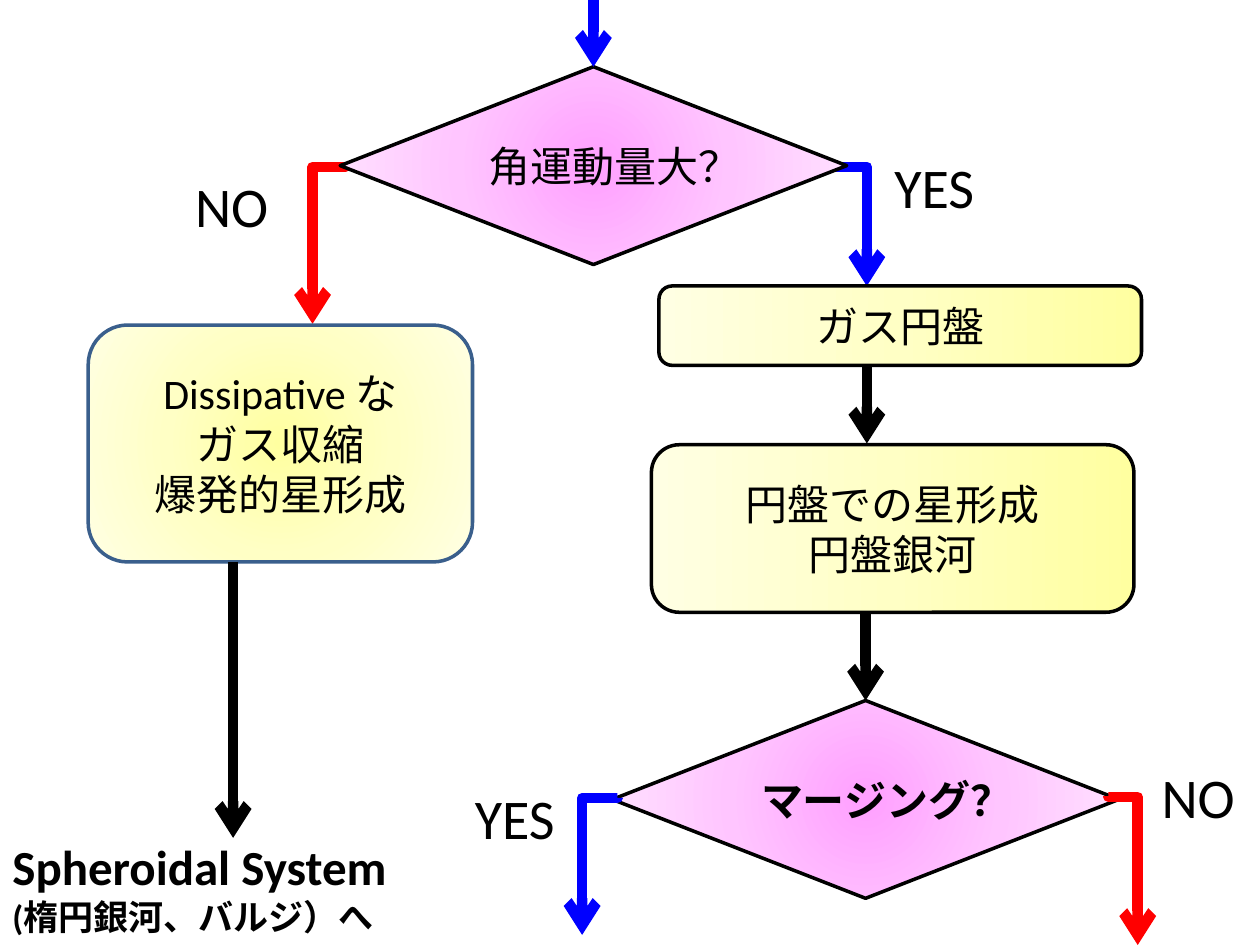
from lxml.etree import SubElement
from pptx import Presentation
from pptx.dml.color import RGBColor
from pptx.enum.shapes import MSO_CONNECTOR, MSO_SHAPE
from pptx.enum.text import MSO_ANCHOR, MSO_AUTO_SIZE, PP_ALIGN
from pptx.oxml.ns import qn
from pptx.util import Inches, Pt

COLORS = {"yes": "0000FF", "no": "FF0000", "black": "000000", "navy": "3A5F8C"}
GRADIENTS = {
    "yellow": ["FFFFA0", "FFFFC5", "FFFFE3"],
    "pink": ["FFA0FF", "FFC5FF", "FFE3FF"],
}
FONT = "Calibri"


def rgb(name):
    return RGBColor.from_string(COLORS[name])


def set_gradient(sp, name, radial):
    """Three-stop gradient, from the centre or from right to left."""
    sp.fill.gradient()
    grad = sp._element.spPr.find(qn("a:gradFill"))
    for child in list(grad):
        grad.remove(child)
    stops = SubElement(grad, qn("a:gsLst"))
    for i, color in enumerate(GRADIENTS[name]):
        gs = SubElement(stops, qn("a:gs"), pos=str(i * 50000))
        SubElement(gs, qn("a:srgbClr"), val=color)
    if radial:
        shade = SubElement(grad, qn("a:path"), path="circle")
        SubElement(shade, qn("a:fillToRect"), l="50000", t="50000", r="50000", b="50000")
    else:
        SubElement(grad, qn("a:lin"), ang="10800000", scaled="0")


def write_lines(tf, lines, sizes, bold=False, align=None):
    for i, (line, size) in enumerate(zip(lines, sizes)):
        p = tf.paragraphs[0] if i == 0 else tf.add_paragraph()
        p.text = line
        p.alignment = align
        p.font.name = FONT
        p.font.size = Pt(size)
        p.font.bold = bold
        p.font.color.rgb = rgb("black")


def add_node(s, kind, box, lines, fill, radial=True, line="black", bold=False):
    sp = s.shapes.add_shape(kind, *map(Inches, box))
    sp.shadow.inherit = False
    set_gradient(sp, fill, radial)
    sp.line.color.rgb = rgb(line)
    sp.line.width = Pt(2)
    tf = sp.text_frame
    tf.word_wrap = True
    tf.vertical_anchor = MSO_ANCHOR.MIDDLE
    write_lines(tf, lines, [24] * len(lines), bold, PP_ALIGN.CENTER)
    return sp


def add_decision(s, left, top, text, bold=False):
    return add_node(s, MSO_SHAPE.FLOWCHART_DECISION, (left, top, 4.02, 1.57),
                    [text], "pink", bold=bold)


def add_label(s, box, lines, sizes, bold=False, wrap=True):
    tb = s.shapes.add_textbox(*map(Inches, box))
    tf = tb.text_frame
    tf.word_wrap = wrap
    tf.auto_size = MSO_AUTO_SIZE.SHAPE_TO_FIT_TEXT
    write_lines(tf, lines, sizes, bold)


def style_arrow(cxn, color):
    cxn.line.color.rgb = rgb(color)
    cxn.line.width = Pt(6)
    SubElement(cxn.line._get_or_add_ln(), qn("a:tailEnd"), type="arrow")
    SubElement(cxn._element.spPr, qn("a:effectLst"))


def add_down_arrow(s, x, y1, y2, color="black", target=None):
    cxn = s.shapes.add_connector(MSO_CONNECTOR.STRAIGHT, *map(Inches, (x, y1, x, y2)))
    if target is not None:
        cxn.end_connect(target, 0)
    style_arrow(cxn, color)


def add_branch(s, x1, y1, x2, y2, color):
    """Arrow that runs sideways first, then down: a turned elbow connector."""
    w, h = y2 - y1, abs(x2 - x1)
    left, top = (x1 + x2 - w) / 2, (y1 + y2 - h) / 2
    cxn = s.shapes.add_connector(MSO_CONNECTOR.ELBOW,
                                 *map(Inches, (left, top, left + w, top + h)))
    xfrm = cxn._element.spPr.find(qn("a:xfrm"))
    if x2 > x1:
        xfrm.set("rot", str(270 * 60000))
        xfrm.set("flipH", "1")
    else:
        xfrm.set("rot", str(90 * 60000))
    geom = cxn._element.spPr.find(qn("a:prstGeom"))
    guides = geom.find(qn("a:avLst"))
    if guides is None:
        guides = SubElement(geom, qn("a:avLst"))
    SubElement(guides, qn("a:gd"), name="adj1", fmla="val 400")
    style_arrow(cxn, color)


def main():
    prs = Presentation()
    prs.slide_width, prs.slide_height = Inches(10), Inches(7.5)
    s = prs.slides.add_slide(prs.slide_layouts[6])
    rounded = MSO_SHAPE.ROUNDED_RECTANGLE

    # First decision with its two branches behind it
    add_branch(s, 2.74, 1.32, 2.48, 2.57, "no")
    add_branch(s, 6.64, 1.32, 6.88, 2.27, "yes")
    momentum = add_decision(s, 2.7, 0.53, "角運動量大？")
    add_down_arrow(s, 4.71, 0, 0.53, "yes", momentum)

    # Left: spheroidal systems
    add_node(s, rounded, (0.7, 2.58, 3.05, 1.88),
             ["Dissipative な", "ガス収縮", "爆発的星形成"], "yellow", line="navy")
    add_down_arrow(s, 1.85, 4.46, 6.65)
    add_label(s, (0, 6.59, 3.38, 0.91), ["Spheroidal System", "(楕円銀河、バルジ）へ"],
              [28, 20], bold=True, wrap=False)

    # Right: disk galaxies
    add_node(s, rounded, (5.23, 2.27, 3.83, 0.63), ["ガス円盤"], "yellow", radial=False)
    add_down_arrow(s, 6.88, 2.89, 3.52)
    add_node(s, rounded, (5.17, 3.53, 3.83, 1.33), ["円盤での星形成", "円盤銀河"],
             "yellow", radial=False)

    # Second decision with its two branches in front
    merging = add_decision(s, 4.86, 5.56, "マージング？", bold=True)
    add_down_arrow(s, 6.87, 4.85, 5.56, target=merging)
    add_branch(s, 4.9, 6.33, 4.62, 7.42, "yes")
    add_branch(s, 8.8, 6.32, 9.03, 7.5, "no")

    # Answers
    for text, left, top, width in [("NO", 1.45, 1.31, 0.79), ("YES", 7, 1.16, 0.84),
                                   ("NO", 9.12, 6, 0.79), ("YES", 3.67, 6.17, 0.84)]:
        add_label(s, (left, top, width, 0.64), [text], [32])

    prs.save("out.pptx")


if __name__ == "__main__":
    main()
